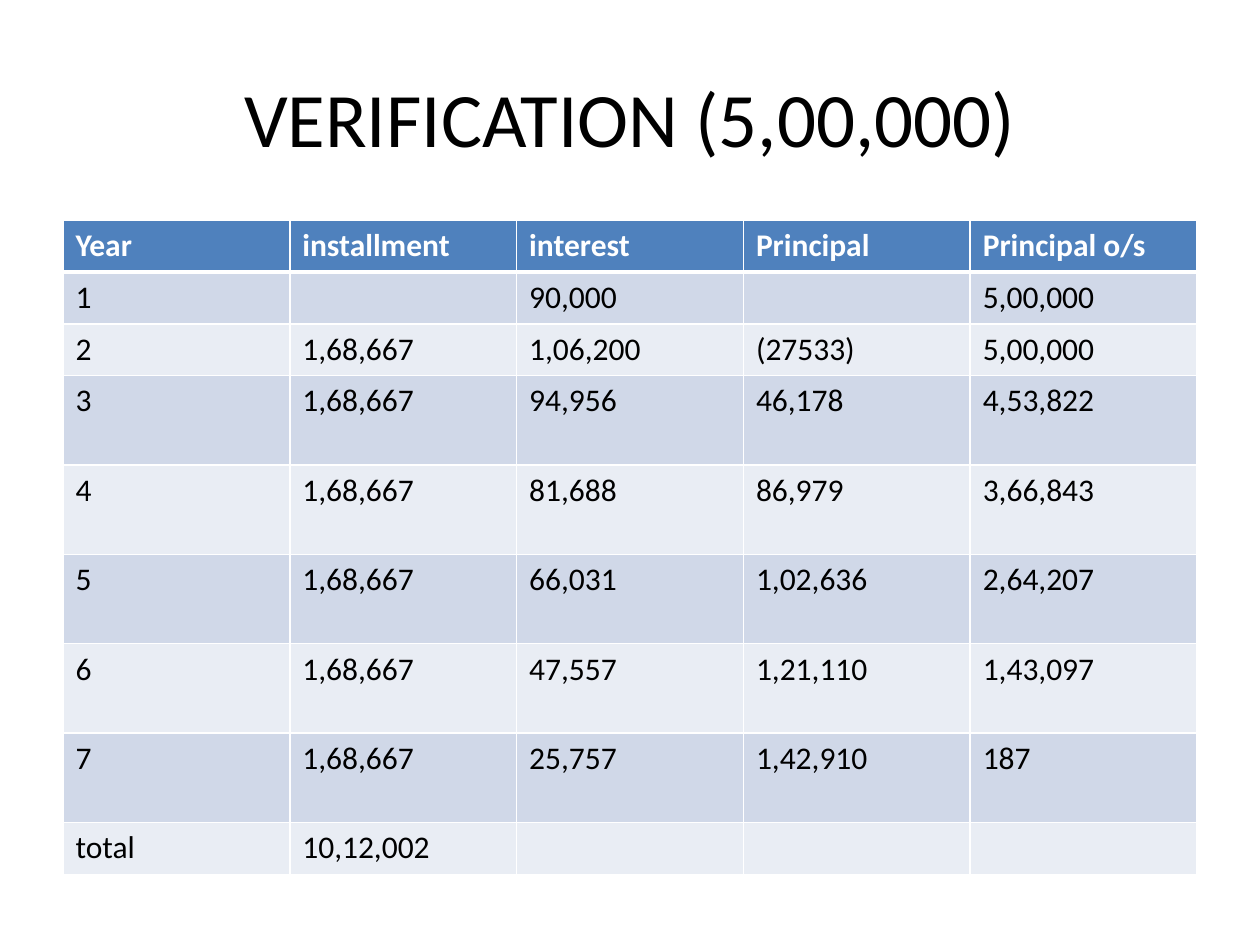
from dataclasses import dataclass

from lxml.etree import SubElement
from pptx import Presentation
from pptx.dml.color import RGBColor as RGB
from pptx.enum.text import MSO_ANCHOR as Anchor, PP_ALIGN as Align
from pptx.oxml.ns import qn
from pptx.util import Inches, Pt


@dataclass(frozen=True)
class Theme:
    font: str = "Calibri"
    title_size: int = 44
    cell_size: int = 18
    text: str = "000000"
    white: str = "FFFFFF"
    header: str = "4F81BD"
    bands: tuple[str, str] = ("D0D8E8", "E9EDF4")
    thin: int = 1
    thick: int = 3


@dataclass(frozen=True)
class Row:
    values: tuple[str, ...]
    height: float = 0.41


THEME = Theme()
TALL = 0.71
INSTALLMENT = "1,68,667"
LEFT, WIDTH = 0.5, 9
ROWS = [
    Row(("Year", "installment", "interest", "Principal", "Principal o/s")),
    Row(("1", "", "90,000", "", "5,00,000")),
    Row(("2", INSTALLMENT, "1,06,200", "(27533)", "5,00,000")),
    Row(("3", INSTALLMENT, "94,956", "46,178", "4,53,822"), TALL),
    Row(("4", INSTALLMENT, "81,688", "86,979", "3,66,843"), TALL),
    Row(("5", INSTALLMENT, "66,031", "1,02,636", "2,64,207"), TALL),
    Row(("6", INSTALLMENT, "47,557", "1,21,110", "1,43,097"), TALL),
    Row(("7", INSTALLMENT, "25,757", "1,42,910", "187"), TALL),
    Row(("total", "10,12,002", "", "", "")),
]


def add_run(p, text: str, size: int, color: str, bold: bool = False) -> None:
    r = p.add_run()
    r.text = text
    r.font.name = THEME.font
    r.font.size = Pt(size)
    r.font.bold = bold
    r.font.color.rgb = RGB.from_string(color)


def add_title(s, text: str) -> None:
    tf = s.shapes.add_textbox(
        Inches(LEFT), Inches(0.3), Inches(WIDTH), Inches(1.25)
    ).text_frame
    tf.word_wrap = True
    tf.vertical_anchor = Anchor.MIDDLE
    p = tf.paragraphs[0]
    p.alignment = Align.CENTER
    add_run(p, text, THEME.title_size, THEME.text)


def set_borders(cell, top: int, bottom: int) -> None:
    """Draw white cell borders; top and bottom widths are in points."""
    widths = {"L": THEME.thin, "R": THEME.thin, "T": top, "B": bottom}
    tc_pr = cell._tc.get_or_add_tcPr()
    for side, width in widths.items():
        ln = SubElement(tc_pr, qn(f"a:ln{side}"), w=str(Pt(width)))
        fill = SubElement(ln, qn("a:solidFill"))
        SubElement(fill, qn("a:srgbClr"), val=THEME.white)


def add_schedule(s, rows: list[Row]) -> None:
    n_cols = len(rows[0].values)
    height = sum(row.height for row in rows)
    table = s.shapes.add_table(
        len(rows), n_cols,
        Inches(LEFT), Inches(1.75), Inches(WIDTH), Inches(height),
    ).table
    for column in table.columns:
        column.width = Inches(WIDTH / n_cols)
    for i, row in enumerate(rows):
        table.rows[i].height = Inches(row.height)
        is_header = i == 0
        fill = THEME.header if is_header else THEME.bands[(i - 1) % 2]
        color = THEME.white if is_header else THEME.text
        top = THEME.thick if i == 1 else THEME.thin
        bottom = THEME.thick if is_header else THEME.thin
        for j, value in enumerate(row.values):
            cell = table.cell(i, j)
            set_borders(cell, top, bottom)
            cell.fill.solid()
            cell.fill.fore_color.rgb = RGB.from_string(fill)
            if value:
                p = cell.text_frame.paragraphs[0]
                add_run(p, value, THEME.cell_size, color, is_header)


def main() -> None:
    prs = Presentation()
    prs.slide_width, prs.slide_height = Inches(10), Inches(7.5)
    s = prs.slides.add_slide(prs.slide_layouts[6])
    add_title(s, "VERIFICATION (5,00,000)")
    add_schedule(s, ROWS)
    prs.save("out.pptx")


if __name__ == "__main__":
    main()
